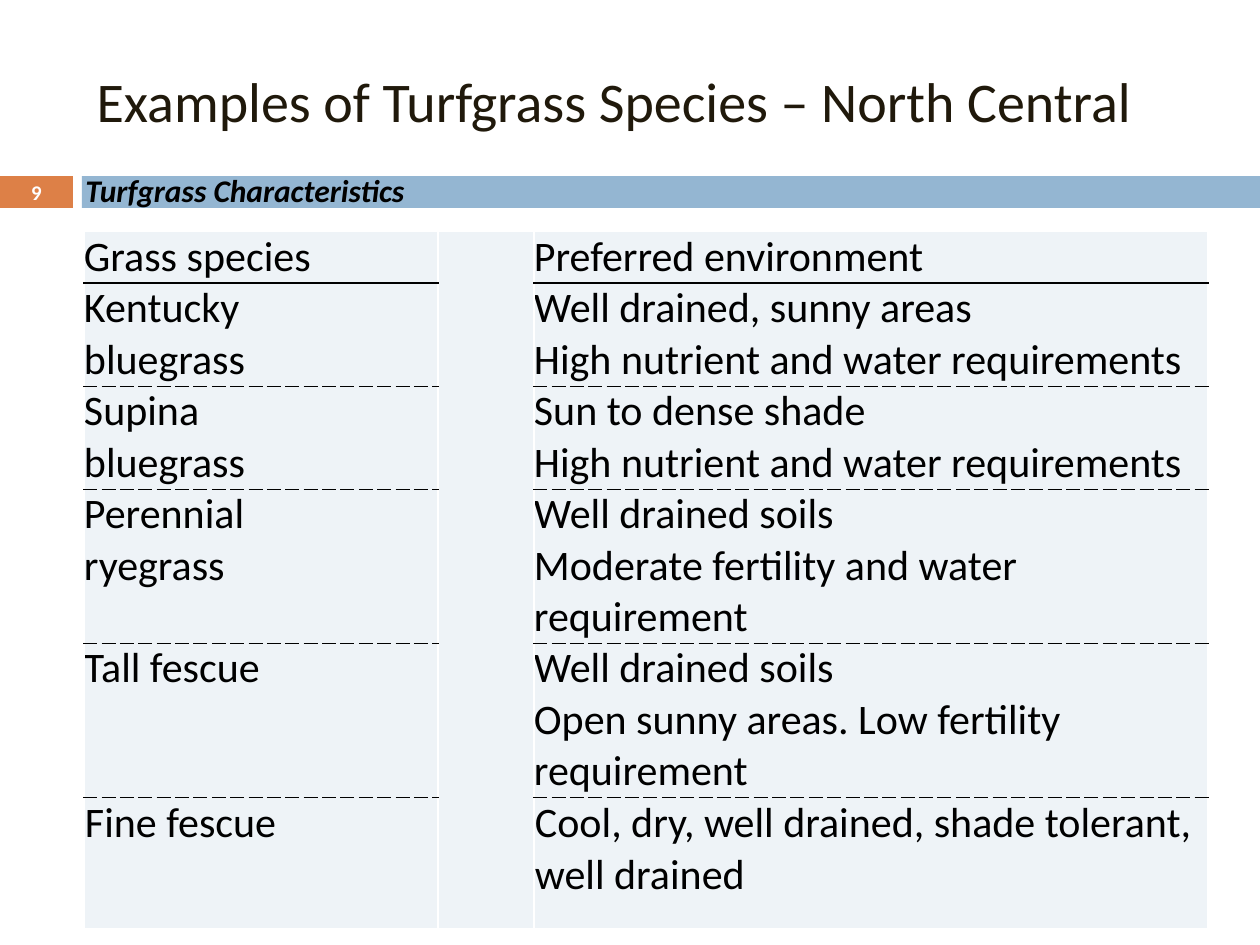
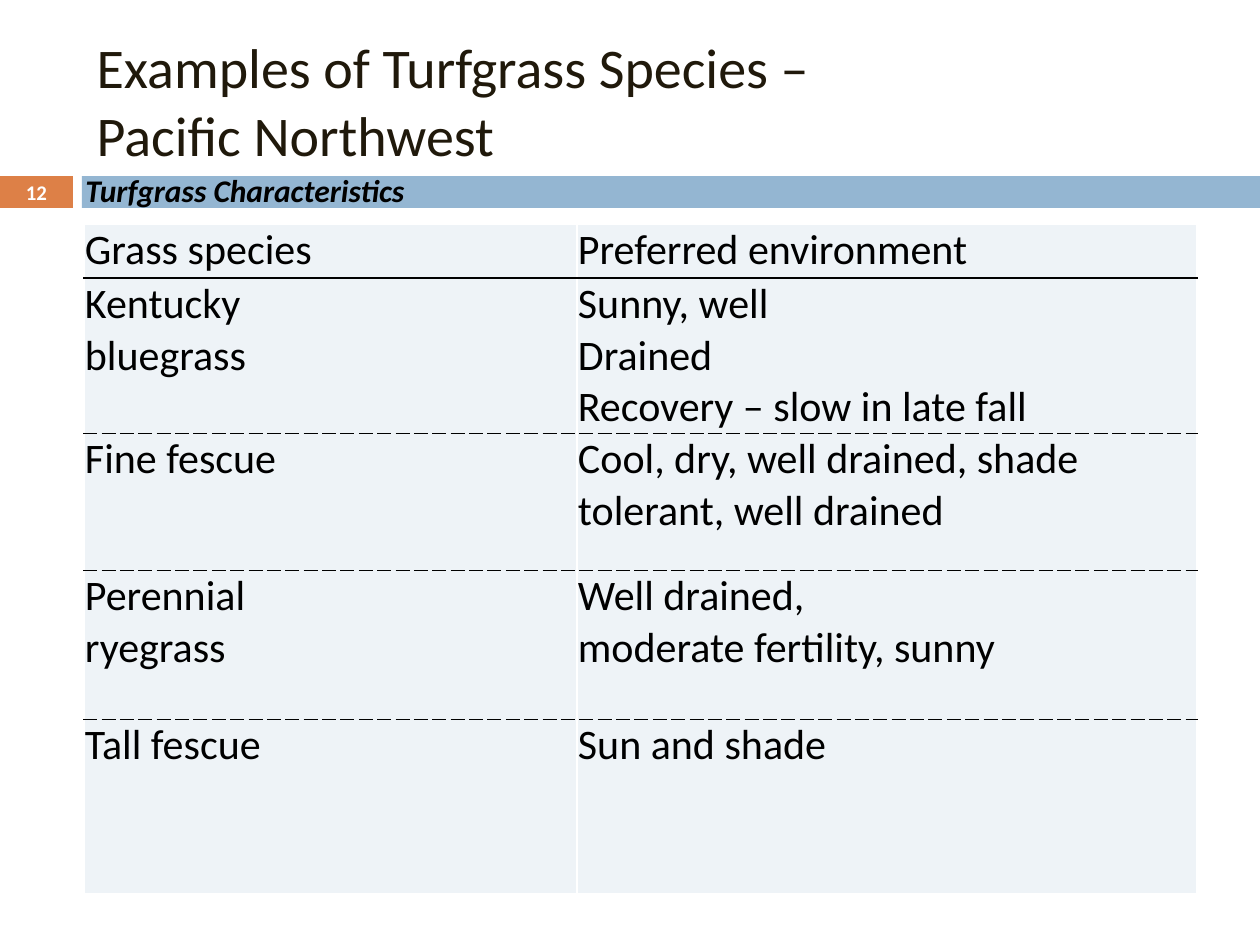
from lxml import etree
from pptx import Presentation
from pptx.dml.color import RGBColor
from pptx.enum.shapes import MSO_SHAPE
from pptx.enum.text import MSO_ANCHOR, MSO_AUTO_SIZE, PP_ALIGN
from pptx.oxml.ns import qn
from pptx.util import Emu, Pt

RECTANGLE = MSO_SHAPE.RECTANGLE
TOP, MIDDLE, BOTTOM = MSO_ANCHOR.TOP, MSO_ANCHOR.MIDDLE, MSO_ANCHOR.BOTTOM
LEFT, CENTER = PP_ALIGN.LEFT, PP_ALIGN.CENTER
NO_FIT, GROW = MSO_AUTO_SIZE.NONE, MSO_AUTO_SIZE.SHAPE_TO_FIT_TEXT

PX_PER_INCH = 126
FONT = "Calibri"
COLORS = {
    "title": "20190B",
    "text": "000000",
    "white": "FFFFFF",
    "orange": "DD8047",
    "blue": "94B6D2",
    "cell": "EEF3F7",
}
TITLE_BOX = (84, 32, 1124, 136)
BANDS = [((0, 176, 73, 32), "orange"), ((82, 176, 1178, 32), "blue")]
NUMBER_BOX = (0, 175, 73, 34)
SECTION_BOX = (73, 165, 359, 50)
SECTION = "Turfgrass Characteristics"

WHITE_LINE = ("white", 1, "solid")
HEADER_LINE = ("text", 1, "solid")
ROW_LINE = ("text", 0.25, "sysDash")

HEADER = (["Grass species"], ["Preferred environment"])
KENTUCKY = ["Kentucky", "bluegrass"]
RYEGRASS = ["Perennial", "ryegrass"]
FINE_FESCUE = (["Fine fescue"], ["Cool, dry, well drained, shade tolerant, well drained"])

SLIDES = [
    {
        "title": "Examples of Turfgrass Species – North Central",
        "number": "9",
        "origin": (84, 231),
        "columns": [354, 96, 674],
        "text_columns": [0, 2],
        "row_heights": [52, 103, 103, 154, 154, 132],
        "header_anchor": BOTTOM,
        "inset_rows": [5],
        "rows": [
            HEADER,
            (KENTUCKY, ["Well drained, sunny areas \nHigh nutrient and water requirements"]),
            (["Supina", "bluegrass"],
             ["Sun to dense shade", "High nutrient and water requirements"]),
            (RYEGRASS, ["Well drained soils", "Moderate fertility and water requirement"]),
            (["Tall fescue"],
             ["Well drained soils", "Open sunny areas. Low fertility requirement"]),
            FINE_FESCUE,
        ],
    },
    {
        "title": "Examples of Turfgrass Species – \nPacific Northwest",
        "number": "12",
        "origin": (84, 224),
        "columns": [493, 620],
        "text_columns": [0, 1],
        "row_heights": [54, 155, 137, 149, 175],
        "header_anchor": TOP,
        "inset_rows": range(5),
        "rows": [
            HEADER,
            (KENTUCKY, ["Sunny, well", "Drained \nRecovery – slow in late fall"]),
            FINE_FESCUE,
            (RYEGRASS, ["Well drained,", "moderate fertility, sunny"]),
            (["Tall fescue"], ["Sun and shade"]),
        ],
    },
]


def px(value):
    return Emu(round(value * 914400 / PX_PER_INCH))


def color(name):
    return RGBColor.from_string(COLORS[name])


def write(frame, paragraphs, size, color_name, align=LEFT, bold=False, italic=False):
    for index, text in enumerate(paragraphs):
        paragraph = frame.add_paragraph() if index else frame.paragraphs[0]
        paragraph.alignment = align
        for line_index, line in enumerate(text.split("\n")):
            if line_index:
                paragraph.add_line_break()
            run = paragraph.add_run()
            run.text = line
            font = run.font
            font.name, font.size = FONT, Pt(size)
            font.bold, font.italic = bold, italic
            font.color.rgb = color(color_name)


def add_title(slide, text):
    title = slide.shapes.title
    title.left, title.top, title.width, title.height = map(px, TITLE_BOX)
    frame = title.text_frame
    frame.vertical_anchor = MIDDLE
    frame.auto_size = NO_FIT
    write(frame, [text], 32, "title")


def add_bands(slide):
    for box, fill in BANDS:
        band = slide.shapes.add_shape(RECTANGLE, *map(px, box))
        band.shadow.inherit = False
        band.fill.solid()
        band.fill.fore_color.rgb = color(fill)
        band.line.fill.background()


def add_number(slide, number):
    frame = slide.shapes.add_textbox(*map(px, NUMBER_BOX)).text_frame
    frame.word_wrap = True
    frame.vertical_anchor = MIDDLE
    write(frame, [number], 11.9, "white", CENTER, bold=True)


def add_section(slide):
    frame = slide.shapes.add_textbox(*map(px, SECTION_BOX)).text_frame
    frame.word_wrap = False
    frame.auto_size = GROW
    write(frame, [SECTION], 18, "text", bold=True, italic=True)


def set_borders(cell, top, bottom):
    properties = cell._tc.get_or_add_tcPr()
    sides = {"L": WHITE_LINE, "R": WHITE_LINE, "T": top, "B": bottom}
    for index, (side, (color_name, width, dash)) in enumerate(sides.items()):
        line = etree.Element(qn(f"a:ln{side}"), w=str(Pt(width)))
        fill = etree.SubElement(line, qn("a:solidFill"))
        etree.SubElement(fill, qn("a:srgbClr"), val=COLORS[color_name])
        etree.SubElement(line, qn("a:prstDash"), val=dash)
        properties.insert(index, line)


def format_cell(cell, inset, top, bottom):
    cell.margin_left = cell.margin_top = cell.margin_right = px(inset)
    cell.margin_bottom = 0
    cell.fill.solid()
    cell.fill.fore_color.rgb = color("cell")
    set_borders(cell, top, bottom)


def add_species_table(slide, content):
    widths, heights = content["columns"], content["row_heights"]
    box = (*content["origin"], sum(widths), sum(heights))
    table = slide.shapes.add_table(len(heights), len(widths), *map(px, box)).table
    table.first_row = table.horz_banding = False
    for column, width in zip(table.columns, widths):
        column.width = px(width)
    for row, height in zip(table.rows, heights):
        row.height = px(height)

    inner_lines = [ROW_LINE] * (len(heights) - 2)
    lines = [WHITE_LINE, HEADER_LINE, *inner_lines, WHITE_LINE]
    for row_index, texts in enumerate(content["rows"]):
        inset = 1 if row_index in content["inset_rows"] else 0
        for column_index, text in zip(content["text_columns"], texts):
            cell = table.cell(row_index, column_index)
            format_cell(cell, inset, lines[row_index], lines[row_index + 1])
            cell.vertical_anchor = TOP if row_index else content["header_anchor"]
            write(cell.text_frame, text, 24, "text")

    for column_index in set(range(len(widths))) - set(content["text_columns"]):
        for row_index in range(len(heights)):
            format_cell(table.cell(row_index, column_index), 0, WHITE_LINE, WHITE_LINE)
        table.cell(0, column_index).merge(table.cell(len(heights) - 1, column_index))


def main():
    presentation = Presentation()
    presentation.slide_width, presentation.slide_height = px(1260), px(945)
    for content in SLIDES:
        slide = presentation.slides.add_slide(presentation.slide_layouts[5])
        add_title(slide, content["title"])
        add_bands(slide)
        add_number(slide, content["number"])
        add_species_table(slide, content)
        add_section(slide)
    presentation.save("out.pptx")


if __name__ == "__main__":
    main()
